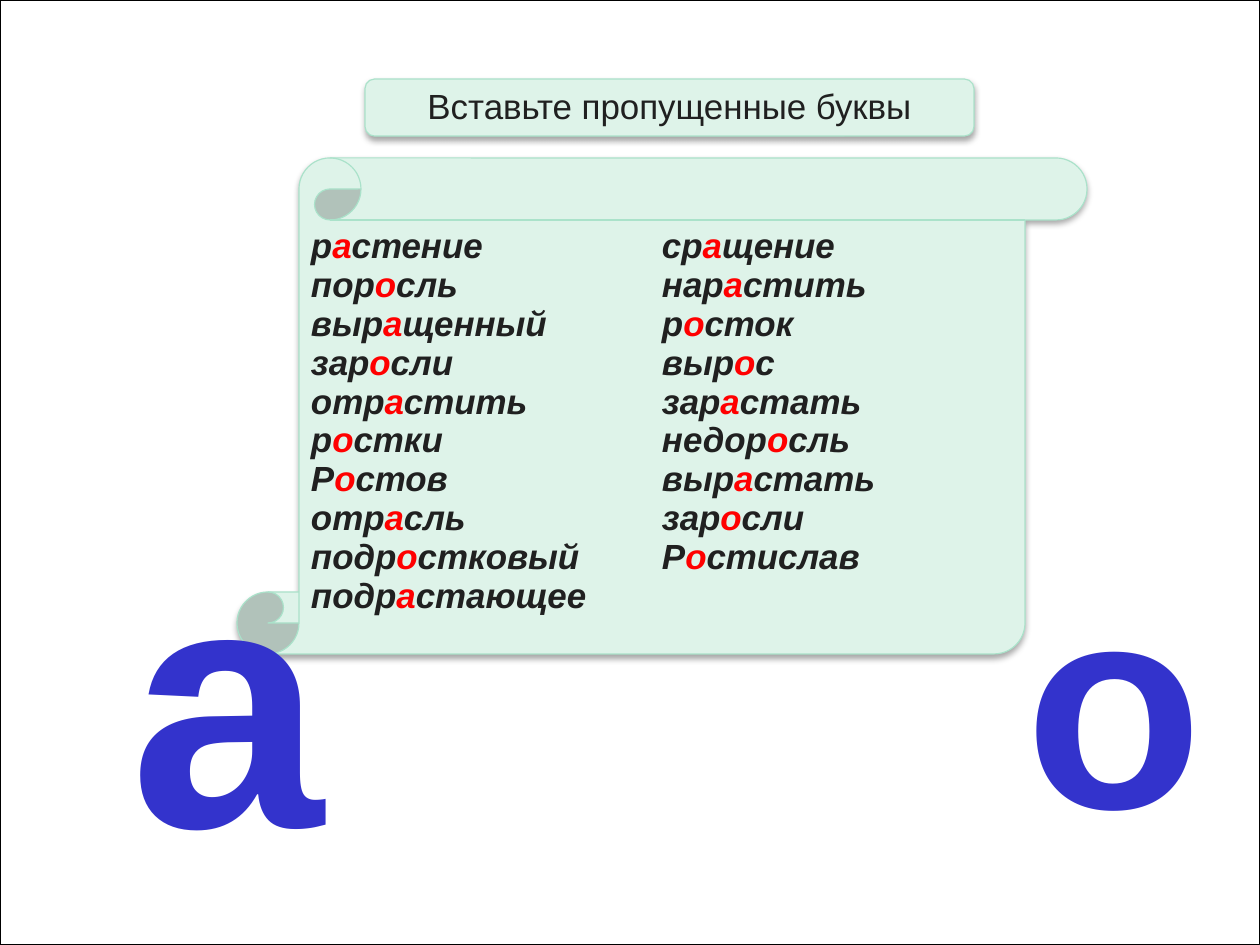
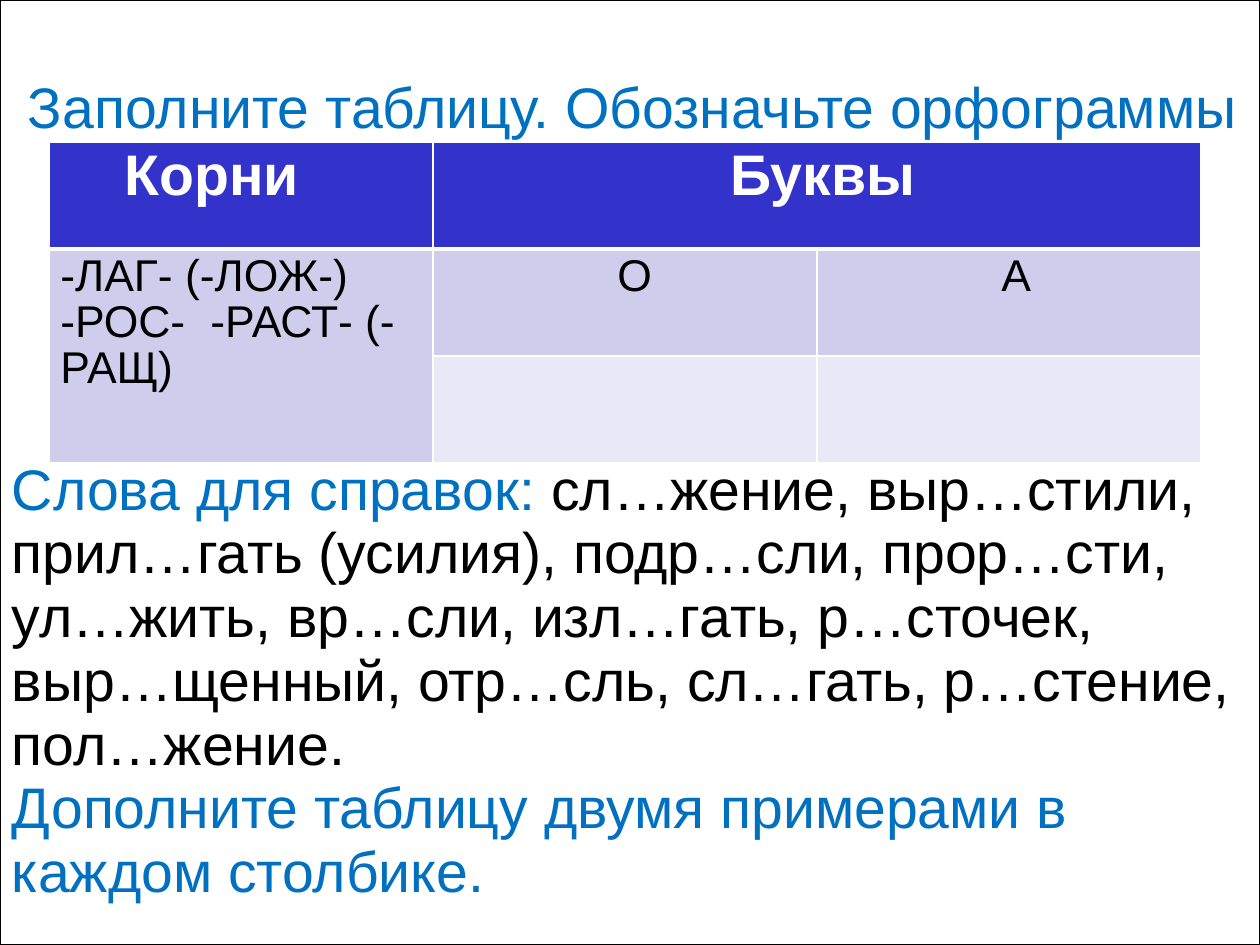
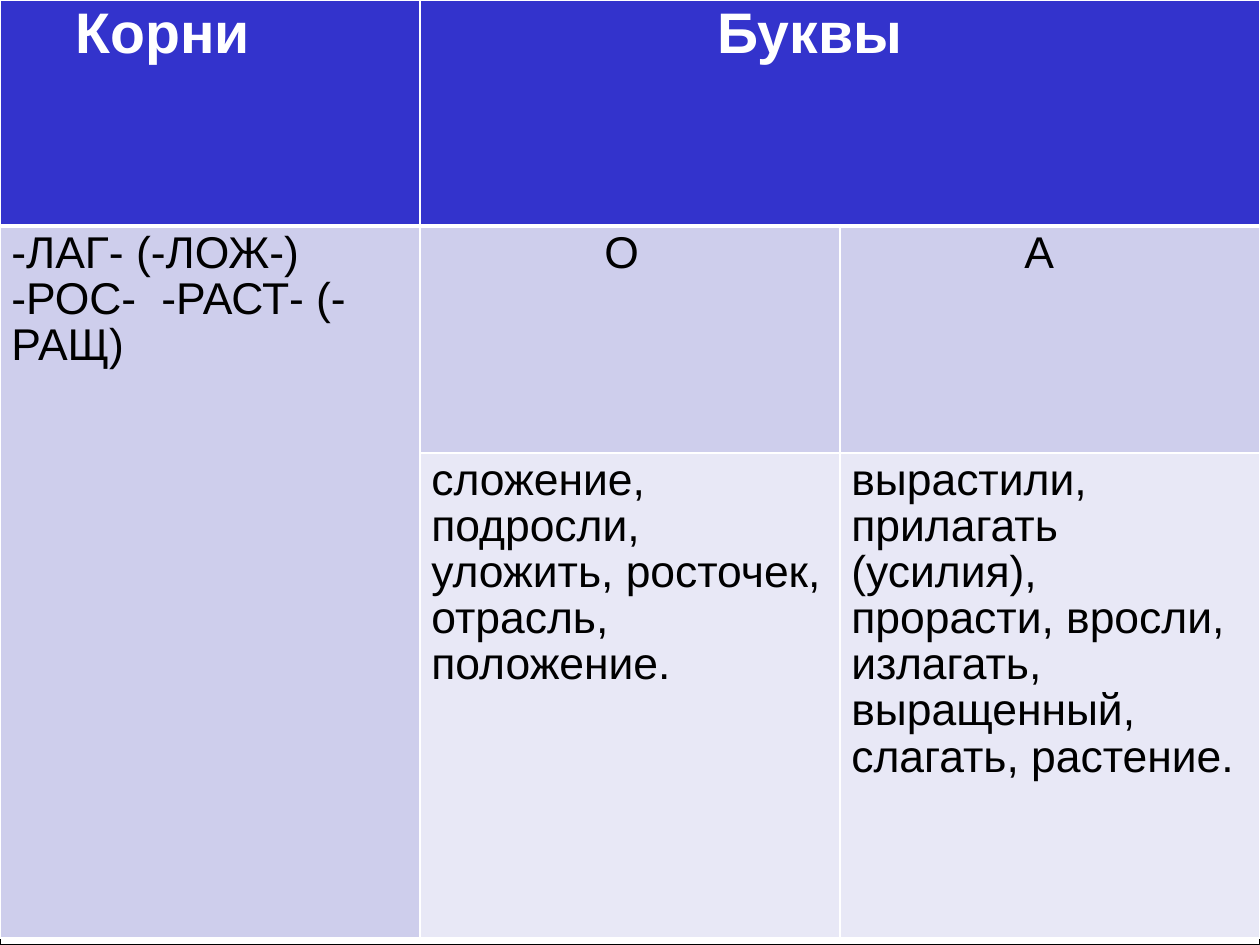
"""Build three slides of a spelling lesson on alternating root vowels."""
from dataclasses import dataclass
from typing import Any

from lxml import etree
from pptx import Presentation
from pptx import util as u
from pptx.dml.color import RGBColor
from pptx.enum import shapes, text
from pptx.oxml.ns import qn

PX = 8000
WIDE, HIGH = 1260, 945
FACE = "Arial"
WHITE = RGBColor(0xFF, 0xFF, 0xFF)
BLACK = RGBColor(0, 0, 0)
INK = RGBColor(0x20, 0x20, 0x20)
RED = RGBColor(0xFF, 0, 0)
BLUE = RGBColor(0x33, 0x33, 0xCC)
SKY = RGBColor(0, 0x70, 0xC0)
MINT = RGBColor(0xDE, 0xF3, 0xE9)
EDGE = RGBColor(0xAA, 0xE2, 0xCA)
LILAC = RGBColor(0xCE, 0xCE, 0xEC)
PALE = RGBColor(0xE8, 0xE8, 0xF6)


@dataclass(frozen=True)
class Box:
    left: int
    top: int
    width: int
    height: int

    def emu(self) -> list[int]:
        return [n * PX for n in (self.left, self.top, self.width, self.height)]


@dataclass(frozen=True)
class Style:
    size: int
    color: RGBColor
    bold: bool = False
    italic: bool = False


@dataclass(frozen=True)
class Para:
    runs: tuple[tuple[str, Style], ...]
    indent: int = 0
    tab: int = 0
    center: bool = False


@dataclass(frozen=True)
class Letter:
    sign: str
    box: Box
    size: int


TITLE = Style(22, INK)
WORD = Style(22, INK, True, True)
VOWEL = Style(22, RED, True, True)
TASK = Style(36, SKY)
BODY = Style(36, BLACK)
HEAD = Style(36, WHITE, True)
CELL = Style(28, BLACK)

WORDS = (
    "р*а*стение пор*о*сль выр*а*щенный зар*о*сли отр*а*стить р*о*стки Р*о*стов "
    "отр*а*сль подр*о*стковый подр*а*стающее ср*а*щение нар*а*стить р*о*сток "
    "выр*о*с зар*а*стать недор*о*сль выр*а*стать зар*о*сли Р*о*стислав"
).split()
LETTERS = (
    Letter("а", Box(118, 510, 222, 405), 219),
    Letter("о", Box(1014, 542, 206, 341), 183),
)
HINTS = (
    "сл…жение, выр…стили, прил…гать (усилия), подр…сли, прор…сти, ул…жить, "
    "вр…сли, изл…гать, р…сточек, выр…щенный, отр…сль, сл…гать, р…стение, пол…жение."
)
KEYS = (
    "сложение, подросли, уложить, росточек, отрасль, положение.",
    "вырастили, прилагать (усилия), прорасти, вросли, излагать, "
    "выращенный, слагать, растение.",
)


def put(item: Any, values: dict[str, Any]) -> None:
    for name, value in values.items():
        setattr(item, name, value)


def line(words: str, style: Style, indent: int = 0, tab: int = 0,
         center: bool = False) -> Para:
    return Para(((words, style),), indent, tab, center)


def write(frame: Any, paras: list[Para]) -> None:
    for i, para in enumerate(paras):
        p = frame.paragraphs[0] if i == 0 else frame.add_paragraph()
        props = p._p.get_or_add_pPr()
        if para.indent:
            props.set("marL", str(para.indent * PX))
        if para.tab:
            tabs = etree.SubElement(props, qn("a:tabLst"))
            etree.SubElement(tabs, qn("a:tab"), pos=str(para.tab * PX), algn="l")
        align = text.PP_ALIGN.CENTER if para.center else text.PP_ALIGN.LEFT
        put(p, {"line_spacing": 0.93, "alignment": align})
        for words, style in para.runs:
            run = p.add_run()
            run.text = words
            put(run.font, {"name": FACE, "size": u.Pt(style.size),
                           "bold": style.bold, "italic": style.italic})
            run.font.color.rgb = style.color


def fit(frame: Any, wrap: bool = True) -> None:
    put(frame, {"word_wrap": wrap, "vertical_anchor": text.MSO_ANCHOR.TOP,
                "margin_left": 12 * PX, "margin_right": 12 * PX,
                "margin_top": 7 * PX, "margin_bottom": 7 * PX})


def label(slide: Any, box: Box, paras: list[Para], wrap: bool = True) -> None:
    frame = slide.shapes.add_textbox(*box.emu()).text_frame
    fit(frame, wrap)
    write(frame, paras)


def shape(slide: Any, kind: Any, box: Box, fill: RGBColor, edge: RGBColor) -> Any:
    item = slide.shapes.add_shape(kind, *box.emu())
    item.shadow.inherit = False
    item.fill.solid()
    item.fill.fore_color.rgb = fill
    item.line.color.rgb = edge
    item.line.width = u.Pt(0.75)
    return item


def panel(slide: Any, kind: Any, box: Box, paras: list[Para]) -> Any:
    item = shape(slide, kind, box, MINT, EDGE)
    effects = item._element.spPr.find(qn("a:effectLst"))
    shade = etree.SubElement(effects, qn("a:outerShdw"), blurRad=str(u.Pt(4)),
                             dist=str(u.Pt(2)), dir="5400000", rotWithShape="0")
    color = etree.SubElement(shade, qn("a:srgbClr"), val=str(BLACK))
    etree.SubElement(color, qn("a:alpha"), val="35000")
    fit(item.text_frame)
    write(item.text_frame, paras)
    return item


def page(deck: Any) -> Any:
    slide = deck.slides.add_slide(deck.slide_layouts[6])
    shape(slide, shapes.MSO_SHAPE.RECTANGLE, Box(0, 0, WIDE, HIGH), WHITE, BLACK)
    return slide


def border(cell: Any, row: int) -> None:
    props = cell._tc.get_or_add_tcPr()
    thick = {0: "B", 1: "T"}.get(row)
    for side in "LRTB":
        width = 3 if side == thick else 1
        edge = etree.SubElement(props, qn(f"a:ln{side}"), w=str(u.Pt(width)))
        solid = etree.SubElement(edge, qn("a:solidFill"))
        etree.SubElement(solid, qn("a:srgbClr"), val=str(WHITE))


def chart(slide: Any, box: Box, rows: list[int], keys: tuple[str, ...] = ()) -> None:
    table = slide.shapes.add_table(3, 3, *box.emu()).table
    for col in table.columns:
        col.width = box.width * PX // 3
    for row, height in zip(table.rows, rows):
        row.height = height * PX
    for r, fill in enumerate((BLUE, LILAC, PALE)):
        for c in range(3):
            cell = table.cell(r, c)
            border(cell, r)
            cell.fill.solid()
            cell.fill.fore_color.rgb = LILAC if r and c == 0 else fill
    table.cell(0, 1).merge(table.cell(0, 2))
    table.cell(1, 0).merge(table.cell(2, 0))
    cells = {
        (0, 0): [line("Корни", HEAD, 64)],
        (0, 1): [line("Буквы", HEAD, 286)],
        (1, 0): [line("-ЛАГ- (-ЛОЖ-)", CELL),
                 line("-РОС-\t-РАСТ- (-РАЩ)", CELL, tab=150)],
        (1, 1): [line("О", CELL, 173)],
        (1, 2): [line("А", CELL, 173)],
    }
    cells |= {(2, c): [line(key, CELL)] for c, key in enumerate(keys, 1)}
    for spot, paras in cells.items():
        write(table.cell(*spot).text_frame, paras)


def gaps(deck: Any) -> None:
    slide = page(deck)
    paras = []
    for word in WORDS:
        start, vowel, end = word.split("*")
        paras.append(Para(((start, WORD), (vowel, VOWEL), (end, WORD))))
    scroll = panel(slide, shapes.MSO_SHAPE.VERTICAL_SCROLL,
                   Box(237, 158, 850, 496), paras)
    body = scroll.text_frame._txBody.bodyPr
    body.set("numCol", "2")
    for letter in LETTERS:
        label(slide, letter.box,
              [line(letter.sign, Style(letter.size, BLUE, True))], False)
    panel(slide, shapes.MSO_SHAPE.ROUNDED_RECTANGLE, Box(365, 79, 609, 57),
          [line("Вставьте пропущенные буквы", TITLE, center=True)])


def task(deck: Any) -> None:
    slide = page(deck)
    label(slide, Box(16, 70, 1244, 78),
          [line("Заполните таблицу. Обозначьте орфограммы", TASK)])
    label(slide, Box(0, 452, WIDE, 462), [
        Para((("Слова для справок: ", TASK), (HINTS, BODY))),
        line("Дополните таблицу двумя примерами в каждом столбике.", TASK),
    ])
    chart(slide, Box(49, 142, 1152, 321), [107] * 3)


def answer(deck: Any) -> None:
    slide = page(deck)
    chart(slide, Box(0, 0, WIDE, 938), [226, 227, 485], KEYS)


def main() -> None:
    deck = Presentation()
    put(deck, {"slide_width": WIDE * PX, "slide_height": HIGH * PX})
    for build in (gaps, task, answer):
        build(deck)
    deck.save("out.pptx")


if __name__ == "__main__":
    main()
